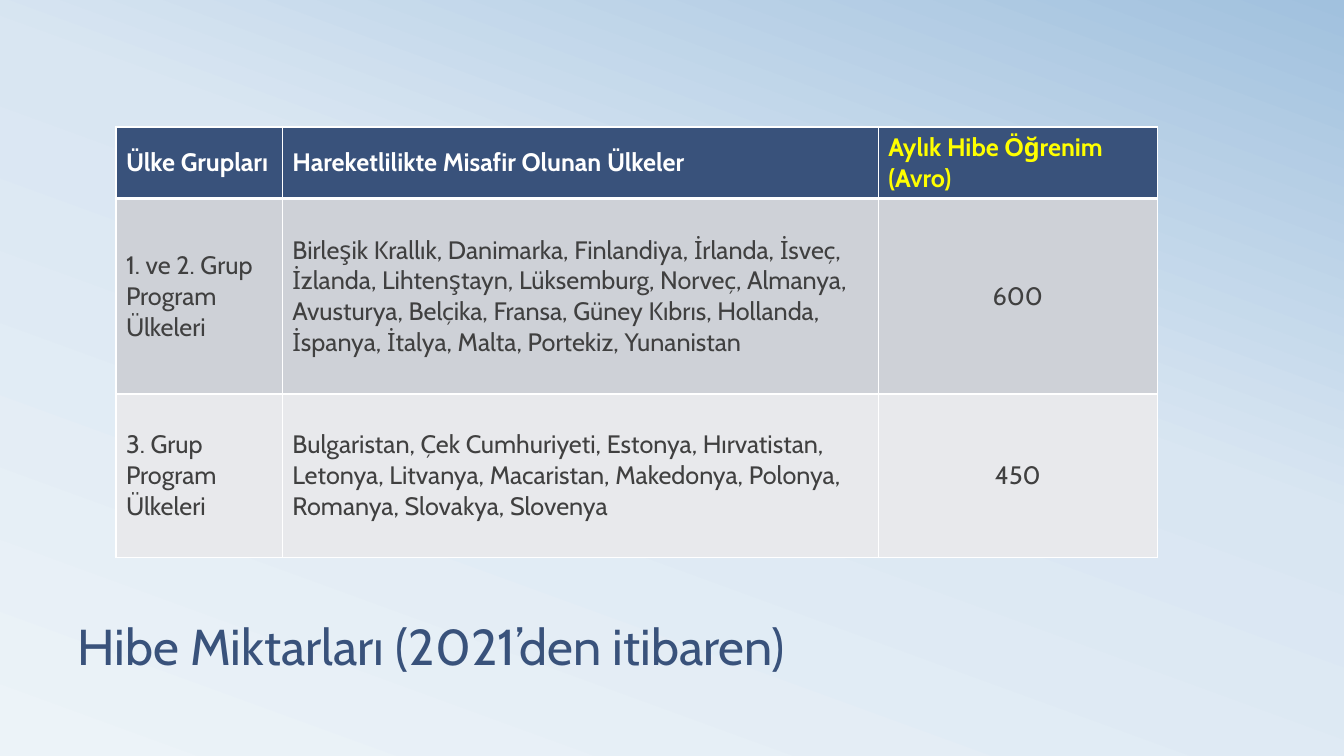
from dataclasses import dataclass

import lxml.etree
import pptx
import pptx.dml.color
import pptx.enum.text
import pptx.oxml.ns
import pptx.util

Inches = pptx.util.Inches
Pt = pptx.util.Pt
RGB = pptx.dml.color.RGBColor.from_string
qn = pptx.oxml.ns.qn
PP_ALIGN = pptx.enum.text.PP_ALIGN
MSO_ANCHOR = pptx.enum.text.MSO_ANCHOR


@dataclass(frozen=True)
class Theme:
    font: str = "Cabin"
    title_size: int = 36
    table_size: int = 18
    navy: str = "39527B"
    white: str = "FFFFFF"
    highlight: str = "FFFF00"
    body: str = "404040"
    row_fills: tuple = ("39527B", "CED1D7", "E8E9EC")
    backdrop: tuple = ((0, "ECF3F8"), (58, "D9E6F2"), (100, "A1C1DE"))


theme = Theme()


def style_paragraph(p, size, color, bold=False):
    p.font.name = theme.font
    p.font.size = Pt(size)
    p.font.bold = bold
    p.font.color.rgb = RGB(color)


def add_border(cell, side, width):
    """Draw one solid white edge; side is L, R, T or B."""
    tc_pr = cell._tc.get_or_add_tcPr()
    ln = lxml.etree.SubElement(tc_pr, qn(f"a:ln{side}"), w=str(Pt(width)))
    fill = lxml.etree.SubElement(ln, qn("a:solidFill"))
    lxml.etree.SubElement(fill, qn("a:srgbClr"), val=theme.white)


prs = pptx.Presentation()
prs.slide_width, prs.slide_height = Inches(13.33), Inches(7.5)
s = prs.slides.add_slide(prs.slide_layouts[6])

# Background gradient
fill = s.background.fill
fill.gradient()
fill.gradient_angle = 70
stops = s.element.xpath(".//a:gsLst")[0]
for stop in list(stops):
    stops.remove(stop)
for percent, color in theme.backdrop:
    stop = lxml.etree.SubElement(stops, qn("a:gs"), pos=str(percent * 1000))
    lxml.etree.SubElement(stop, qn("a:srgbClr"), val=color)

# Title
title = s.shapes.add_textbox(Inches(0.67), Inches(5.58), Inches(12), Inches(1.17))
tf = title.text_frame
tf.word_wrap = True
tf.vertical_anchor = MSO_ANCHOR.BOTTOM
p = tf.paragraphs[0]
p.text = "Hibe Miktarları (2021’den itibaren)"
p.line_spacing = 0.8
style_paragraph(p, theme.title_size, theme.navy)

# Grant table
grants = [
    ("Ülke Grupları", "Hareketlilikte Misafir Olunan Ülkeler", "Aylık Hibe Öğrenim\v(Avro)"),
    (
        "1. ve 2. Grup Program Ülkeleri",
        "Birleşik Krallık, Danimarka, Finlandiya, İrlanda, İsveç, İzlanda, "
        "Lihtenştayn, Lüksemburg, Norveç, Almanya, Avusturya, Belçika, Fransa, "
        "Güney Kıbrıs, Hollanda, İspanya, İtalya, Malta, Portekiz, Yunanistan",
        "600",
    ),
    (
        "3. Grup Program Ülkeleri",
        "Bulgaristan, Çek Cumhuriyeti, Estonya, Hırvatistan, Letonya, Litvanya, "
        "Macaristan, Makedonya, Polonya, Romanya, Slovakya, Slovenya",
        "450",
    ),
]
column_widths = (1.65, 5.91, 2.77)
row_heights = (0.71, 1.94, 1.62)
header_colors = (theme.white, theme.white, theme.highlight)

table = s.shapes.add_table(
    len(grants), len(column_widths), Inches(1.15), Inches(1.26),
    Inches(sum(column_widths)), Inches(sum(row_heights)),
).table
for column, width in zip(table.columns, column_widths):
    column.width = Inches(width)
for row, height in zip(table.rows, row_heights):
    row.height = Inches(height)

for r, texts in enumerate(grants):
    is_header = r == 0
    for c, text in enumerate(texts):
        cell = table.cell(r, c)
        cell.vertical_anchor = MSO_ANCHOR.MIDDLE
        for side in "LRTB":
            heavy = (is_header and side == "B") or (r == 1 and side == "T")
            add_border(cell, side, 3 if heavy else 1)
        cell.fill.solid()
        cell.fill.fore_color.rgb = RGB(theme.row_fills[r])
        p = cell.text_frame.paragraphs[0]
        p.text = text
        p.alignment = PP_ALIGN.CENTER if c == 2 and not is_header else PP_ALIGN.LEFT
        color = header_colors[c] if is_header else theme.body
        style_paragraph(p, theme.table_size, color, bold=is_header)

prs.save("out.pptx")
